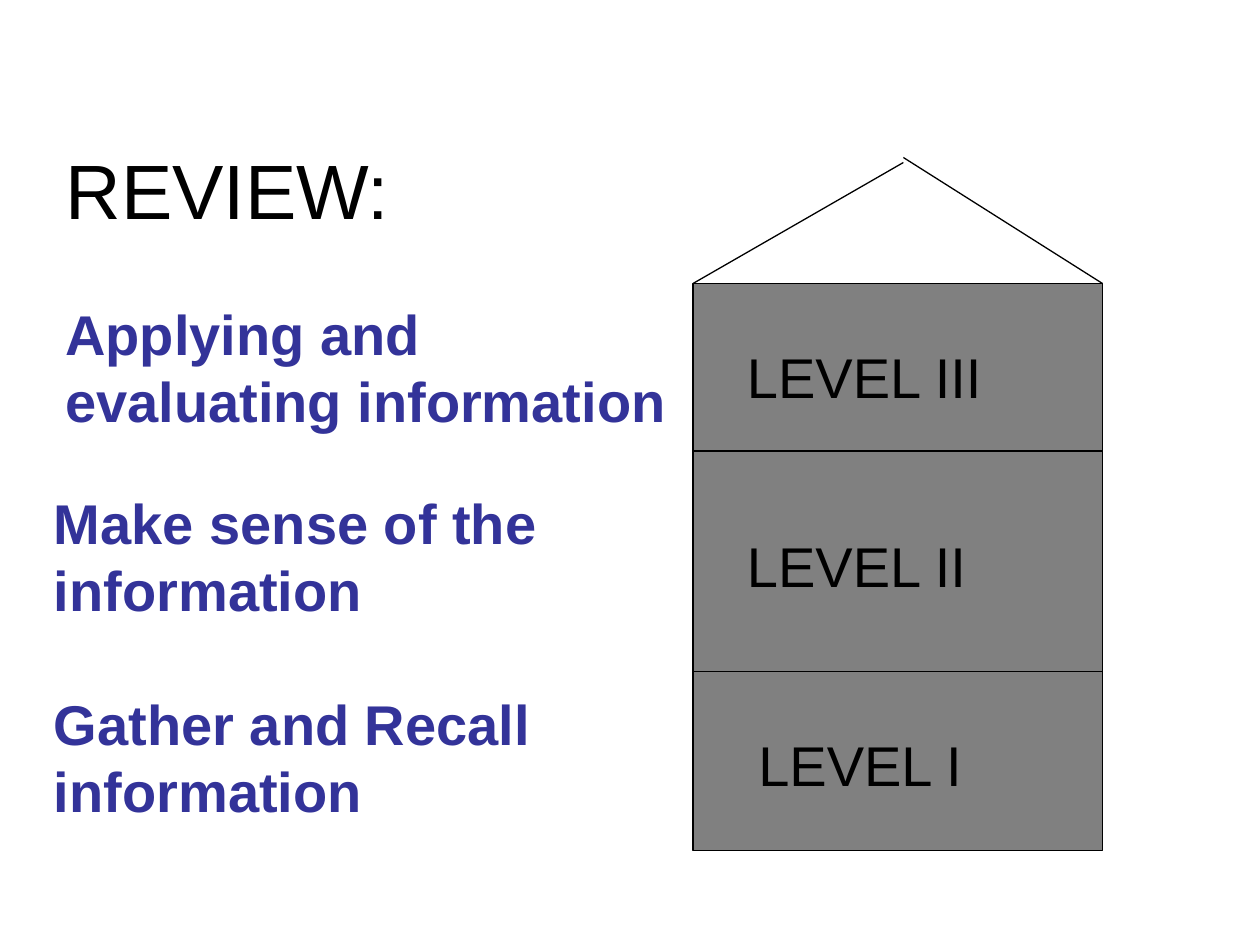
from pptx import Presentation
from pptx.dml.color import RGBColor
from pptx.enum.shapes import MSO_CONNECTOR, MSO_SHAPE
from pptx.enum.text import MSO_ANCHOR, MSO_AUTO_SIZE, PP_ALIGN
from pptx.oxml.ns import qn
from pptx.util import Inches, Pt
from lxml import etree

STRAIGHT = MSO_CONNECTOR.STRAIGHT
RECTANGLE = MSO_SHAPE.RECTANGLE
TOP = MSO_ANCHOR.TOP
LEFT = PP_ALIGN.LEFT
GROW = MSO_AUTO_SIZE.SHAPE_TO_FIT_TEXT

BLACK = RGBColor(0x00, 0x00, 0x00)
GRAY = RGBColor(0x80, 0x80, 0x80)
INDIGO = RGBColor(0x33, 0x33, 0x99)

FONT = "Arial"
LINE_WIDTH = Pt(0.75)

# House walls, in inches
WALL_LEFT, WALL_TOP, WALL_WIDTH, WALL_HEIGHT = 5.5, 2.25, 3.25, 4.5
WALL_RIGHT = WALL_LEFT + WALL_WIDTH
PEAK = 7.17

# Level name, its box, description, its box
LEVELS = [
    ("LEVEL III", (5.83, 2.67, 3.42, 0.63),
     "Applying and evaluating information", (0.42, 2.33, 5.08, 1.17)),
    ("LEVEL II", (5.83, 4.17, 2.92, 0.63),
     "Make sense of the information", (0.33, 3.83, 5.75, 1.17)),
    ("LEVEL I", (5.92, 5.75, 2.5, 0.63),
     "Gather and Recall information", (0.33, 5.42, 4.92, 1.17)),
]


def write_text(box, text, size=32, color=BLACK, bold=False):
    frame = box.text_frame
    frame.word_wrap = True
    frame.auto_size = GROW
    frame.vertical_anchor = TOP
    para = frame.paragraphs[0]
    para.alignment = LEFT
    span = para.add_run()
    span.text = text
    span.font.name = FONT
    span.font.size = Pt(size)
    span.font.bold = bold
    span.font.color.rgb = color


def add_text(page, place, text, **style):
    box = page.shapes.add_textbox(*map(Inches, place))
    write_text(box, text, **style)


def add_title(page, place, text, **style):
    title = page.shapes.title
    title.left, title.top, title.width, title.height = map(Inches, place)
    write_text(title, text, **style)


def add_line(page, *ends):
    line = page.shapes.add_connector(STRAIGHT, *map(Inches, ends))
    line.line.color.rgb = BLACK
    line.line.width = LINE_WIDTH
    etree.SubElement(line._element.spPr, qn("a:effectLst"))


def add_walls(page):
    walls = page.shapes.add_shape(
        RECTANGLE, Inches(WALL_LEFT), Inches(WALL_TOP),
        Inches(WALL_WIDTH), Inches(WALL_HEIGHT))
    walls.shadow.inherit = False
    walls.fill.solid()
    walls.fill.fore_color.rgb = GRAY
    walls.line.color.rgb = BLACK
    walls.line.width = LINE_WIDTH


def main():
    deck = Presentation()
    deck.slide_width, deck.slide_height = Inches(10), Inches(7.5)
    page = deck.slides.add_slide(deck.slide_layouts.get_by_name("Title Only"))

    add_title(page, (0.42, 1.08, 3.75, 0.83), "REVIEW:", size=44)

    # House: walls, floors and roof
    add_walls(page)
    for floor in (5.33, 3.58):
        add_line(page, WALL_LEFT, floor, WALL_RIGHT, floor)
    add_line(page, WALL_LEFT, WALL_TOP, PEAK, 1.29)
    add_line(page, PEAK, 1.25, WALL_RIGHT, WALL_TOP)

    # Level names and what each level means
    for name, name_place, meaning, meaning_place in LEVELS:
        add_text(page, name_place, name)
        add_text(page, meaning_place, meaning, color=INDIGO, bold=True)

    deck.save("out.pptx")


if __name__ == "__main__":
    main()
